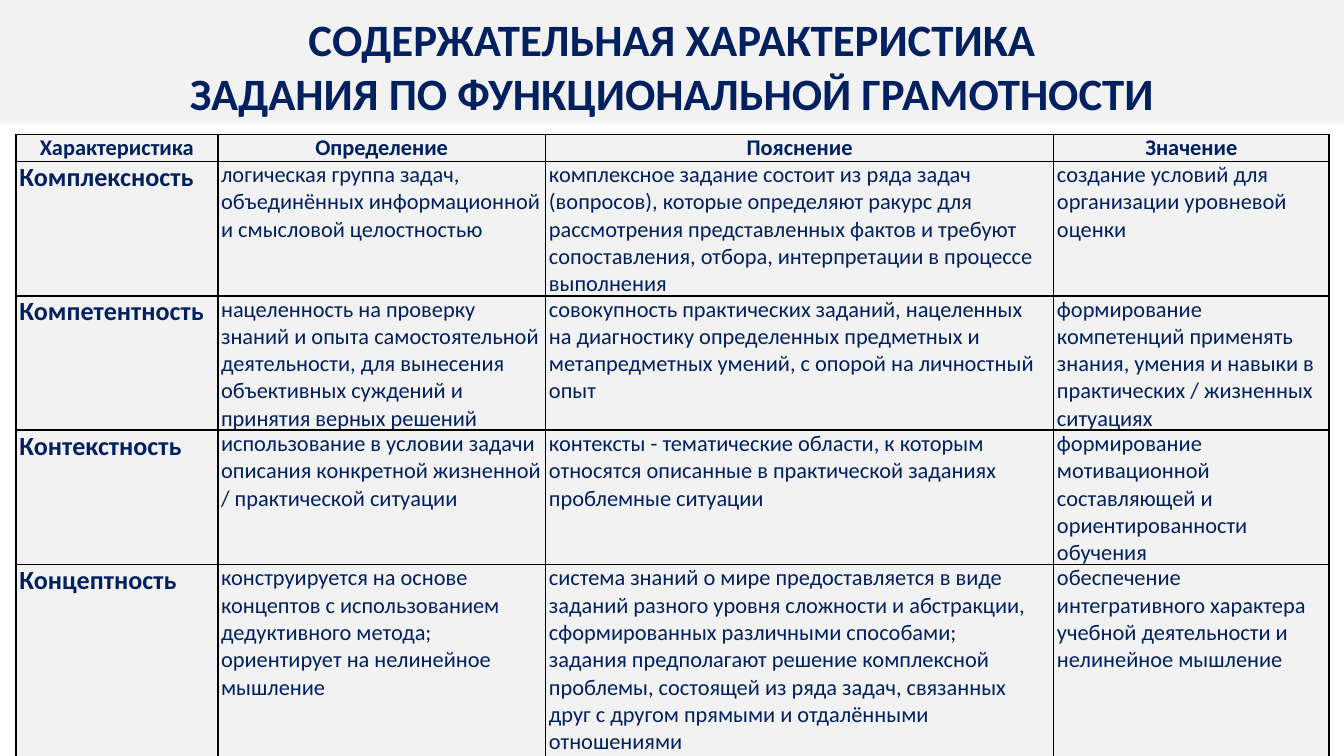
import pptx
import pptx.util
import pptx.oxml
import pptx.dml.color
import pptx.enum.shapes
import pptx.enum.text

Inches, Pt = pptx.util.Inches, pptx.util.Pt
ALIGN = pptx.enum.text.PP_ALIGN
ANCHOR = pptx.enum.text.MSO_ANCHOR

# Content
TITLE = ["СОДЕРЖАТЕЛЬНАЯ ХАРАКТЕРИСТИКА", "ЗАДАНИЯ ПО ФУНКЦИОНАЛЬНОЙ ГРАМОТНОСТИ"]
HEADER = ["Характеристика", "Определение", "Пояснение", "Значение"]
# Each cell is a list of paragraphs
ROWS = [
    (["Комплексность"],
     ["логическая группа задач, объединённых информационной и смысловой целостностью"],
     ["комплексное задание состоит из ряда задач (вопросов), которые определяют ракурс для "
      "рассмотрения представленных фактов и требуют сопоставления, отбора, интерпретации "
      "в процессе выполнения"],
     ["создание условий для организации уровневой оценки"]),
    (["Компетентность"],
     ["нацеленность на проверку знаний и опыта самостоятельной деятельности, для вынесения "
      "объективных суждений и принятия верных решений"],
     ["совокупность практических заданий, нацеленных на диагностику определенных предметных "
      "и метапредметных умений, с опорой на личностный опыт"],
     ["формирование компетенций применять знания, умения и навыки в практических / "
      "жизненных ситуациях"]),
    (["Контекстность"],
     ["использование в условии задачи описания конкретной жизненной / практической ситуации"],
     ["контексты - тематические области, к которым относятся описанные в практической "
      "заданиях проблемные ситуации"],
     ["формирование мотивационной составляющей и ориентированности обучения"]),
    (["Концептность"],
     ["конструируется на основе концептов с использованием дедуктивного метода; "
      "ориентирует на нелинейное мышление"],
     ["система знаний о мире предоставляется в виде заданий разного уровня сложности и "
      "абстракции, сформированных различными способами;",
      "задания предполагают решение комплексной проблемы, состоящей из ряда задач, "
      "связанных друг с другом прямыми и отдалёнными отношениями"],
     ["обеспечение интегративного характера учебной деятельности и нелинейное мышление"]),
]

# Layout, in inches; the slide is 16:9
WIDTH = 10
HEIGHT = WIDTH * 9 / 16
COLUMNS = [1.5, 2.44, 3.78, 2.05]
ROW_HEIGHTS = [0.2, 0.99, 0.99, 0.99, 1.45]
SIDE_MARGIN = Pt(1.8)
COLORS = {"ink": "002060", "panel": "F2F2F2", "border": "000000"}
FONT = "Calibri"


def color(name):
    return pptx.dml.color.RGBColor.from_string(COLORS[name])


def paint(target, name):
    target.fill.solid()
    target.fill.fore_color.rgb = color(name)


def write(frame, lines, size=12, bold=False, align=ALIGN.LEFT):
    for index, line in enumerate(lines):
        para = frame.paragraphs[0] if index == 0 else frame.add_paragraph()
        para.alignment = align
        span = para.add_run()
        span.text = line
        span.font.name, span.font.size, span.font.bold = FONT, Pt(size), bold
        span.font.color.rgb = color("ink")


def add_borders(cell):
    properties = cell._tc.get_or_add_tcPr()
    for index, side in enumerate(("lnL", "lnR", "lnT", "lnB")):
        properties.insert(index, pptx.oxml.parse_xml(
            f'<a:{side} xmlns:a="http://schemas.openxmlformats.org/drawingml/2006/main" '
            f'w="{Pt(1)}"><a:solidFill><a:srgbClr val="{COLORS["border"]}"/>'
            f'</a:solidFill></a:{side}>'))


deck = pptx.Presentation()
deck.slide_width, deck.slide_height = Inches(WIDTH), Inches(HEIGHT)
page = deck.slides.add_slide(deck.slide_layouts[5])

# Title over a full-width band
title = page.shapes.title
title.left, title.top = 0, Inches(0.04)
title.width, title.height = Inches(WIDTH), Inches(0.91)
title.text_frame.vertical_anchor = ANCHOR.TOP
title.text_frame.auto_size = pptx.enum.text.MSO_AUTO_SIZE.SHAPE_TO_FIT_TEXT
write(title.text_frame, TITLE, size=24, bold=True, align=ALIGN.CENTER)

band = page.shapes.add_shape(pptx.enum.shapes.MSO_SHAPE.RECTANGLE,
                             0, Inches(-0.02), Inches(WIDTH), Inches(0.94))
band.shadow.inherit = False
paint(band, "panel")
band.line.fill.background()
title.element.addprevious(band.element)

# Table
grid = [tuple([text] for text in HEADER)] + ROWS
table = page.shapes.add_table(
    len(grid), len(COLUMNS), Inches(0.12), Inches(1),
    Inches(sum(COLUMNS)), Inches(sum(ROW_HEIGHTS))).table
for column, width in zip(table.columns, COLUMNS):
    column.width = Inches(width)
for row, height in zip(table.rows, ROW_HEIGHTS):
    row.height = Inches(height)

for r, row in enumerate(grid):
    for c, lines in enumerate(row):
        cell = table.cell(r, c)
        cell.margin_left = cell.margin_right = SIDE_MARGIN
        cell.margin_top = cell.margin_bottom = 0
        paint(cell, "panel")
        add_borders(cell)
        if r == 0:
            style = {"bold": True, "align": ALIGN.CENTER}
        elif c == 0:
            style = {"size": 14, "bold": True, "align": ALIGN.JUSTIFY}
        else:
            style = {}
        write(cell.text_frame, lines, **style)

deck.save("out.pptx")
